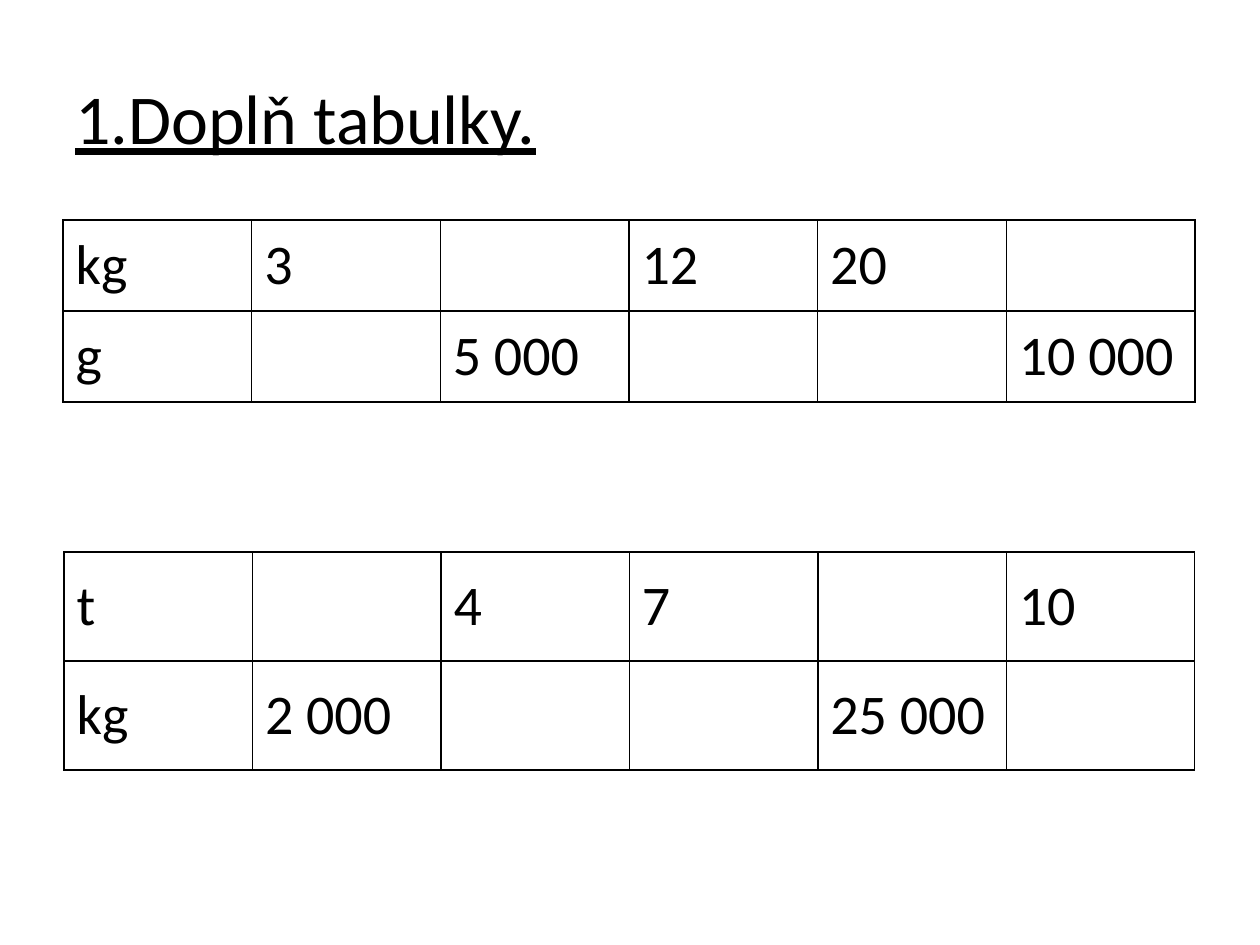
from dataclasses import dataclass

from lxml import etree
from pptx import Presentation
from pptx import util as u
from pptx.dml.color import RGBColor
from pptx.enum import text
from pptx.oxml.ns import qn


@dataclass(frozen=True)
class Theme:
    font: str = "Calibri"
    ink: str = "000000"
    title_size: int = 40
    cell_size: int = 32
    border_width: int = 1


THEME = Theme()
PIXELS_PER_INCH = 126

KILOGRAMS_TO_GRAMS = [
    ["kg", "3", "", "12", "20", ""],
    ["g", "", "5 000", "", "", "10 000"],
]
TONNES_TO_KILOGRAMS = [
    ["t", "", "4", "7", "", "10"],
    ["kg", "2 000", "", "", "25 000", ""],
]


def px(length):
    return u.Emu(round(length * u.Inches(1) / PIXELS_PER_INCH))


def add_run(paragraph, words, size, underline=None):
    run = paragraph.add_run()
    run.text = words
    run.font.name = THEME.font
    run.font.size = u.Pt(size)
    run.font.color.rgb = RGBColor.from_string(THEME.ink)
    run.font.underline = underline


def add_title(slide, box, words):
    title = slide.shapes.add_textbox(*map(px, box))
    frame = title.text_frame
    frame.word_wrap = True
    frame.vertical_anchor = text.MSO_ANCHOR.MIDDLE
    add_run(frame.paragraphs[0], words, THEME.title_size, underline=True)


def add_borders(cell):
    properties = cell._tc.get_or_add_tcPr()
    for side in ("a:lnL", "a:lnR", "a:lnT", "a:lnB"):
        line = etree.SubElement(properties, qn(side), w=str(u.Pt(THEME.border_width)))
        fill = etree.SubElement(line, qn("a:solidFill"))
        etree.SubElement(fill, qn("a:srgbClr"), val=THEME.ink)


def add_conversion_table(slide, box, rows):
    left, top, width, height = box
    column_count = len(rows[0])
    table = slide.shapes.add_table(len(rows), column_count, *map(px, box)).table
    table.first_row = False
    table.horz_banding = False
    for column in table.columns:
        column.width = px(width / column_count)
    for row, values in zip(table.rows, rows):
        row.height = px(height / len(rows))
        for cell, value in zip(row.cells, values):
            add_borders(cell)
            cell.fill.background()
            cell.vertical_anchor = text.MSO_ANCHOR.MIDDLE
            if value:
                add_run(cell.text_frame.paragraphs[0], value, THEME.cell_size)


def main():
    presentation = Presentation()
    presentation.slide_width = px(1260)
    presentation.slide_height = px(945)
    slide = presentation.slides.add_slide(presentation.slide_layouts[6])
    add_title(slide, (63, 38, 1134, 157), "1.Doplň tabulky.")
    add_conversion_table(slide, (63, 220, 1132, 182), KILOGRAMS_TO_GRAMS)
    add_conversion_table(slide, (64, 552, 1131, 218), TONNES_TO_KILOGRAMS)
    presentation.save("out.pptx")


if __name__ == "__main__":
    main()
